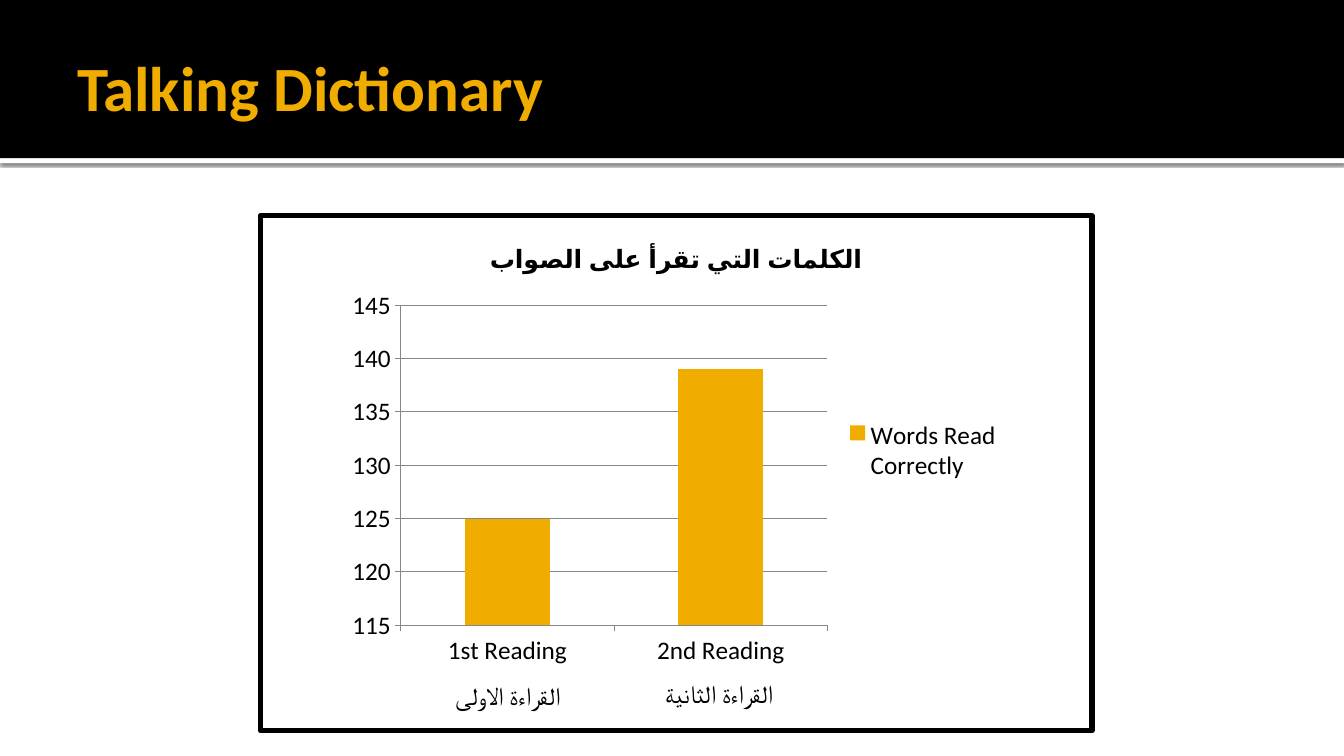
from lxml import etree
from pptx import Presentation
from pptx import util as u
from pptx.chart import data as chart_data
from pptx.dml.color import RGBColor
from pptx.enum import chart as ch, shapes, text
from pptx.oxml import parse_xml
from pptx.oxml.ns import nsdecls, qn

BLACK = RGBColor(0x00, 0x00, 0x00)
WHITE = RGBColor(0xFF, 0xFF, 0xFF)
GOLD = RGBColor(0xF0, 0xAD, 0x00)
GRID_GRAY = RGBColor(0x87, 0x87, 0x87)


class SlideBuilder:
    latin = "Calibri"
    arabic = "Arial"
    body_size = 18

    def __init__(self, slide):
        self.slide = slide

    def style(self, font, name, size, color, bold=False):
        font.name, font.size, font.bold = name, u.Pt(size), bold
        font.color.rgb = color

    def box(self, left, top, width, height, fill=None, line=None, weight=0):
        rect = self.slide.shapes.add_shape(
            shapes.MSO_SHAPE.RECTANGLE, *map(u.Pt, (left, top, width, height)))
        rect.shadow.inherit = False
        if fill is None:
            rect.fill.background()
        else:
            rect.fill.solid()
            rect.fill.fore_color.rgb = fill
        if line is None:
            rect.line.fill.background()
        else:
            rect.line.color.rgb = line
            rect.line.width = u.Pt(weight)
        return rect

    def drop_shadow(self, rect):
        effects = rect._element.spPr.find(qn("a:effectLst"))
        effects.append(parse_xml(
            f'<a:outerShdw {nsdecls("a")} blurRad="{u.Pt(2.5)}" dist="{u.Pt(0.8)}" '
            'dir="5400000" algn="t" rotWithShape="0"><a:srgbClr val="000000">'
            '<a:alpha val="60000"/></a:srgbClr></a:outerShdw>'))

    def label(self, words, left, top, width, height, name, size, color, bold=False):
        frame = self.slide.shapes.add_textbox(
            *map(u.Pt, (left, top, width, height))).text_frame
        frame.word_wrap = True
        frame.vertical_anchor = text.MSO_ANCHOR.MIDDLE
        run = frame.paragraphs[0].add_run()
        run.text = words
        self.style(run.font, name, size, color, bold)

    def place(self, layout_parent, before, **fractions):
        """Give a chart part a fixed place, in fractions of the chart."""
        old = layout_parent.find(qn("c:layout"))
        if old is not None:
            layout_parent.remove(old)
        layout = parse_xml(f'<c:layout {nsdecls("c")}/>')
        manual = etree.SubElement(layout, qn("c:manualLayout"))
        settings = {"layoutTarget": "inner", "xMode": "edge", "yMode": "edge"}
        for tag, value in {**settings, **fractions}.items():
            etree.SubElement(manual, qn(f"c:{tag}")).set("val", str(value))
        layout_parent.find(qn(before)).addprevious(layout)

    def column_chart(self, title, categories, series_name, values,
                     left, top, width, height):
        data = chart_data.CategoryChartData()
        data.categories = categories
        data.add_series(series_name, values)
        chart = self.slide.shapes.add_chart(
            ch.XL_CHART_TYPE.COLUMN_CLUSTERED,
            *map(u.Pt, (left, top, width, height)), data).chart
        self.style(chart.font, self.latin, self.body_size, BLACK)

        # Title and legend
        chart.has_title = True
        run = chart.chart_title.text_frame.paragraphs[0].add_run()
        run.text = title
        self.style(run.font, self.arabic, self.body_size, BLACK, True)
        chart.chart_title.include_in_layout = False
        chart.has_legend = True
        chart.legend.position = ch.XL_LEGEND_POSITION.RIGHT
        chart.legend.include_in_layout = False

        # Axes
        for axis in (chart.category_axis, chart.value_axis):
            axis.major_tick_mark = ch.XL_TICK_MARK.OUTSIDE
            axis.minor_tick_mark = ch.XL_TICK_MARK.NONE
            axis.format.line.color.rgb = GRID_GRAY
        scale = chart.value_axis
        scale.minimum_scale, scale.maximum_scale, scale.major_unit = 115, 145, 5
        scale.has_major_gridlines = True
        scale.major_gridlines.format.line.color.rgb = GRID_GRAY

        # Columns
        plot = chart.plots[0]
        plot.gap_width = 150
        plot.vary_by_categories = False
        columns = plot.series[0].format.fill
        columns.solid()
        columns.fore_color.rgb = GOLD
        plot_area = chart._chartSpace.chart.plotArea
        self.place(plot_area, "c:barChart", x=0.09, y=0.175, w=0.635, h=0.715)


def main():
    deck = Presentation()
    deck.slide_width, deck.slide_height = u.Pt(960), u.Pt(540)
    page = SlideBuilder(deck.slides.add_slide(deck.slide_layouts[6]))

    # Header band with a shadowed white edge
    band_height = 113
    edge = page.box(0, band_height, 960, 3.6, fill=WHITE)
    page.drop_shadow(edge)
    page.box(0, 0, 960, band_height, fill=BLACK)
    page.label("Talking Dictionary", 48, 12, 864, 99, page.latin, 45, GOLD, True)

    # Framed chart of the two readings
    page.box(186, 154, 594, 368, line=BLACK, weight=3.78)
    page.column_chart("الكلمات التي تقرأ على الصواب",
                      ["1st Reading", "2nd Reading"],
                      "Words Read Correctly", [125, 139], 243, 162, 480, 320)

    # Arabic names of the readings
    for reading, left, top, width in (("القراءة الاولى", 318, 482.4, 128),
                                      ("القراءة الثانية", 468, 481, 120)):
        page.label(reading, left, top, width, 29, page.arabic, page.body_size, BLACK)

    deck.save("out.pptx")


if __name__ == "__main__":
    main()
